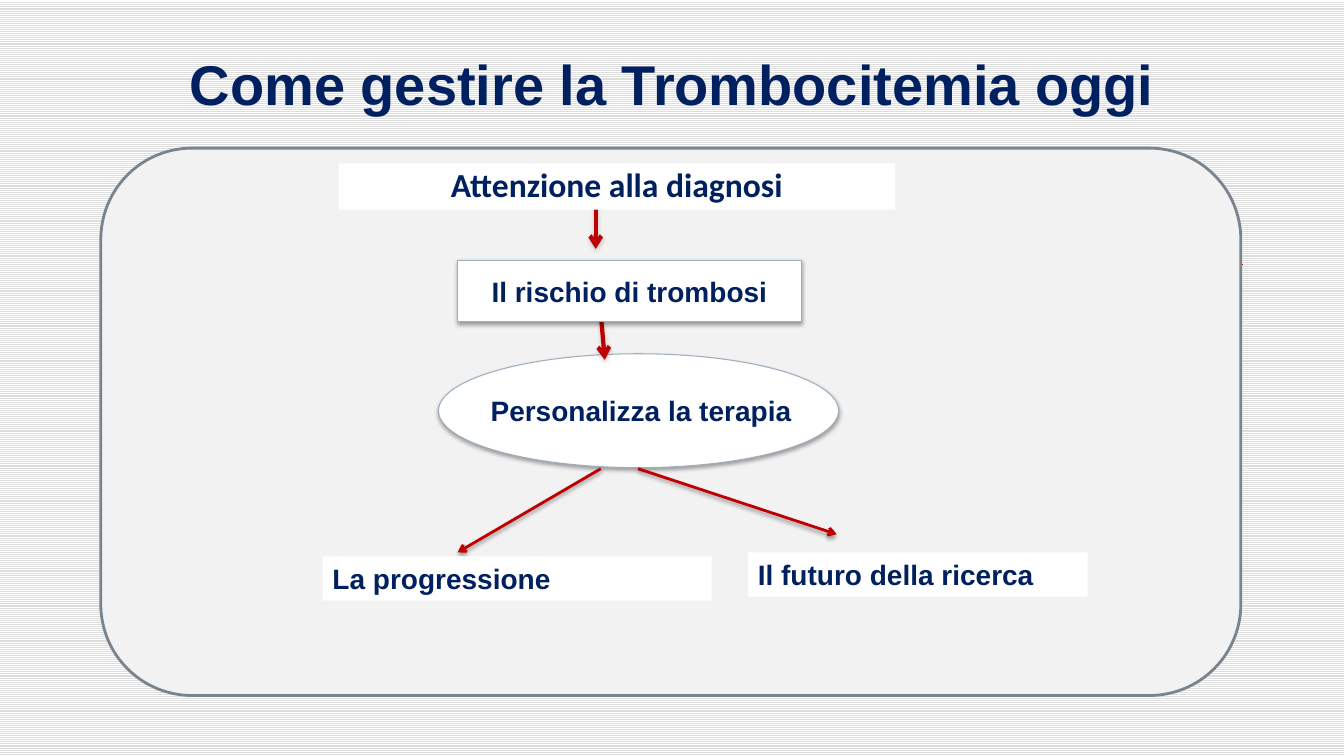
from dataclasses import dataclass

from lxml import etree
from pptx import Presentation
from pptx.dml.color import RGBColor
from pptx.enum.dml import MSO_PATTERN
from pptx.enum.shapes import MSO_CONNECTOR, MSO_SHAPE
from pptx.enum.text import MSO_ANCHOR, PP_ALIGN
from pptx.oxml.ns import qn
from pptx.util import Pt

RECTANGLE, ELLIPSE = MSO_SHAPE.RECTANGLE, MSO_SHAPE.OVAL
ROUNDED = MSO_SHAPE.ROUNDED_RECTANGLE
LEFT, CENTER = PP_ALIGN.LEFT, PP_ALIGN.CENTER
TOP, MIDDLE = MSO_ANCHOR.TOP, MSO_ANCHOR.MIDDLE


@dataclass(frozen=True)
class Theme:
    navy: str = "002060"
    arrow: str = "C00000"
    rule: str = "CC0000"
    white: str = "FFFFFF"
    stripe: str = "DDDDDD"
    panel: str = "F2F2F2"
    panel_border: str = "79848F"
    box_border: str = "9FAEBD"
    group_shadow: str = "808080"
    black: str = "000000"
    font: str = "Arial"
    diagnosis_font: str = "Calibri"
    title_size: float = 40
    diagnosis_size: float = 24
    label_size: float = 20


THEME = Theme()

# Positions are (left, top, width, height) in points.
TITLE = ("Come gestire la Trombocitemia oggi", (124.56, 31.68, 710.64, 55.44))
PANEL = (72, 105.84, 814.32, 390.96)
THERAPY_ELLIPSE = (313.2, 252.72, 285.84, 81.36)
RISK = ("Il rischio di trombosi", (326.88, 185.76, 245.52, 43.92))
DIAGNOSIS = ("Attenzione alla diagnosi", (241.92, 116.64, 397.44, 33.12))
THERAPY = ("Personalizza la terapia", (330.48, 280.08, 254.88, 28.8))
OUTCOMES = [
    ("La progressione", (230.4, 397.44, 277.92, 31.68)),
    ("Il futuro della ricerca", (534.24, 394.56, 242.64, 31.68)),
]

# Lines are (start, end) in points.
HEADER_RULE = ((72, 188.64), (887.76, 188.64))
STEP_ARROWS = [((429.12, 223.92), (432, 257.04)), ((425.52, 133.92), (425.52, 177.84))]
OUTCOME_ARROWS = [((429.12, 334.8), (326.88, 394.56)), ((455.76, 334.8), (597.6, 381.6))]


def rgb(value):
    return RGBColor.from_string(value)


def set_shadow(shape, color=None, opacity=35, distance=1.8):
    """Replace the inherited shadow with a downward one, or with none."""
    effects = etree.SubElement(shape._element.spPr, qn("a:effectLst"))
    if color:
        outer = etree.SubElement(
            effects, qn("a:outerShdw"), blurRad=str(Pt(3.1)),
            dist=str(Pt(distance)), dir="5400000", rotWithShape="0")
        shade = etree.SubElement(outer, qn("a:srgbClr"), val=color)
        etree.SubElement(shade, qn("a:alpha"), val=str(opacity * 1000))


def add_box(slide, kind, position, fill, border=None, width=0.75, shadow=None):
    shape = slide.shapes.add_shape(kind, *map(Pt, position))
    shape.fill.solid()
    shape.fill.fore_color.rgb = rgb(fill)
    if border:
        shape.line.color.rgb = rgb(border)
        shape.line.width = Pt(width)
    else:
        shape.line.fill.background()
    set_shadow(shape, shadow)
    return shape


def write(shape, text, size=THEME.label_size, font=THEME.font, align=CENTER,
          anchor=TOP, spacing=1.0, wrap=True):
    frame = shape.text_frame
    frame.word_wrap = wrap
    frame.vertical_anchor = anchor
    paragraph = frame.paragraphs[0]
    paragraph.alignment = align
    paragraph.line_spacing = spacing
    run = paragraph.add_run()
    run.text = text
    run.font.name = font
    run.font.size = Pt(size)
    run.font.bold = True
    run.font.color.rgb = rgb(THEME.navy)


def add_line(slide, ends, color, width, shadow=None, arrow=True):
    start, end = ends
    line = slide.shapes.add_connector(
        MSO_CONNECTOR.STRAIGHT, *map(Pt, start + end))
    line.line.color.rgb = rgb(color)
    line.line.width = Pt(width)
    if arrow:
        etree.SubElement(line.line._get_or_add_ln(), qn("a:tailEnd"), type="arrow")
    set_shadow(line, shadow, opacity=38, distance=1.6)


def main():
    presentation = Presentation()
    presentation.slide_width, presentation.slide_height = Pt(960), Pt(540)
    slide = presentation.slides.add_slide(presentation.slide_layouts[6])
    background = slide.background.fill
    background.patterned()
    background.pattern = MSO_PATTERN.LIGHT_HORIZONTAL
    background.fore_color.rgb = rgb(THEME.stripe)
    background.back_color.rgb = rgb(THEME.white)

    add_line(slide, HEADER_RULE, THEME.rule, 0.75, arrow=False)
    add_box(slide, ROUNDED, PANEL, THEME.panel, THEME.panel_border, 2)
    add_box(slide, ELLIPSE, THERAPY_ELLIPSE, THEME.white, THEME.box_border,
            shadow=THEME.black)
    for ends in STEP_ARROWS:
        add_line(slide, ends, THEME.arrow, 3, THEME.group_shadow)

    text, position = DIAGNOSIS
    write(add_box(slide, RECTANGLE, position, THEME.white), text,
          THEME.diagnosis_size, THEME.diagnosis_font, spacing=0.9)
    text, position = THERAPY
    write(add_box(slide, RECTANGLE, position, THEME.white), text, spacing=0.9)
    text, position = RISK
    risk = add_box(slide, RECTANGLE, position, THEME.white, THEME.box_border,
                   shadow=THEME.black)
    write(risk, text, anchor=MIDDLE)

    for ends in OUTCOME_ARROWS:
        add_line(slide, ends, THEME.arrow, 2, THEME.black)
    for text, position in OUTCOMES:
        write(add_box(slide, RECTANGLE, position, THEME.white), text, align=LEFT)

    text, position = TITLE
    title = slide.shapes.add_textbox(*map(Pt, position))
    write(title, text, THEME.title_size, wrap=False)
    presentation.save("out.pptx")


if __name__ == "__main__":
    main()
